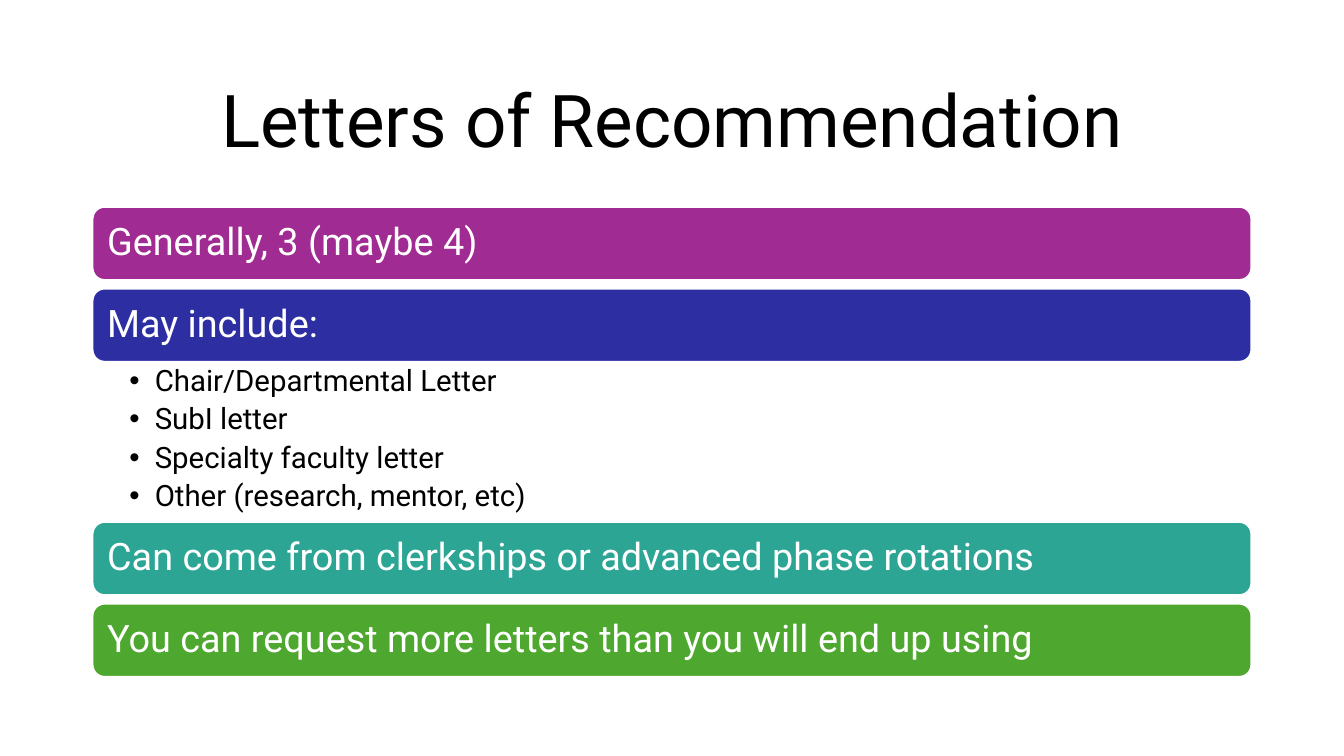
from lxml import etree
from pptx import Presentation
from pptx.dml.color import RGBColor
from pptx.enum.shapes import MSO_SHAPE
from pptx.enum.text import MSO_ANCHOR, MSO_AUTO_SIZE, PP_ALIGN
from pptx.oxml.ns import qn
from pptx.util import Cm, Pt

LEFT, WIDTH = 2.33, 29.21
BAR_H, GAP, LIST_H = 1.85, 0.21, 4.03


def rgb(value):
    return RGBColor.from_string(value)


def write(tf, lines, size=27, color="FFFFFF", align=PP_ALIGN.LEFT, anchor=MSO_ANCHOR.MIDDLE,
          insets=(0.28, 0.28, 0.28, 0.28), after=0, bullet=None):
    tf.word_wrap = True
    tf.auto_size = MSO_AUTO_SIZE.NONE
    tf.vertical_anchor = anchor
    tf.margin_left, tf.margin_top, tf.margin_right, tf.margin_bottom = map(Cm, insets)
    for i, line in enumerate(lines):
        p = tf.add_paragraph() if i else tf.paragraphs[0]
        p.alignment = align
        p.line_spacing = 0.9
        p.space_before, p.space_after = Pt(0), Pt(after)
        if bullet:
            pPr = p._p.get_or_add_pPr()
            pPr.set("marL", str(Cm(0.64)))
            pPr.set("indent", str(-Cm(0.64)))
            etree.SubElement(pPr, qn("a:buChar")).set("char", bullet)
        r = p.add_run()
        r.text = line
        r.font.name, r.font.size = "Roboto", Pt(size)
        r.font.color.rgb = rgb(color)


prs = Presentation()
prs.slide_width, prs.slide_height = Cm(33.87), Cm(19.05)
s = prs.slides.add_slide(prs.slide_layouts[1])
title, body = s.placeholders

# Title
title.left, title.top, title.width, title.height = Cm(LEFT), Cm(1.55), Cm(WIDTH), Cm(3.15)
write(title.text_frame, ["Letters of Recommendation"], size=52, color="000000",
      align=PP_ALIGN.CENTER, insets=(0.25, 0.13, 0.25, 0.13))

# Stacked bars, with the list under the bar that introduces it
bars = [
    ("Generally, 3 (maybe 4)", "A02B93", []),
    ("May include:", "2C2EA2", ["Chair/Departmental Letter", "SubI letter",
                                "Specialty faculty letter", "Other (research, mentor, etc)"]),
    ("Can come from clerkships or advanced phase rotations", "2DA594", []),
    ("You can request more letters than you will end up using", "4EA72E", []),
]
top = 5.21
for text, fill, items in bars:
    sp = s.shapes.add_shape(MSO_SHAPE.ROUNDED_RECTANGLE, Cm(LEFT), Cm(top), Cm(WIDTH), Cm(BAR_H))
    sp.shadow.inherit = False
    sp.fill.solid()
    sp.fill.fore_color.rgb = rgb(fill)
    sp.line.color.rgb = rgb("FFFFFF")
    sp.line.width = Pt(1.5)
    write(sp.text_frame, [text])
    top += BAR_H
    if items:
        body.left, body.top, body.width, body.height = Cm(LEFT), Cm(top), Cm(WIDTH), Cm(LIST_H)
        write(body.text_frame, items, size=21, color="000000", anchor=MSO_ANCHOR.TOP,
              insets=(0.93, 0.1, 0.53, 0.1), after=4.8, bullet="•")
        top += LIST_H
    else:
        top += GAP

prs.save("out.pptx")
